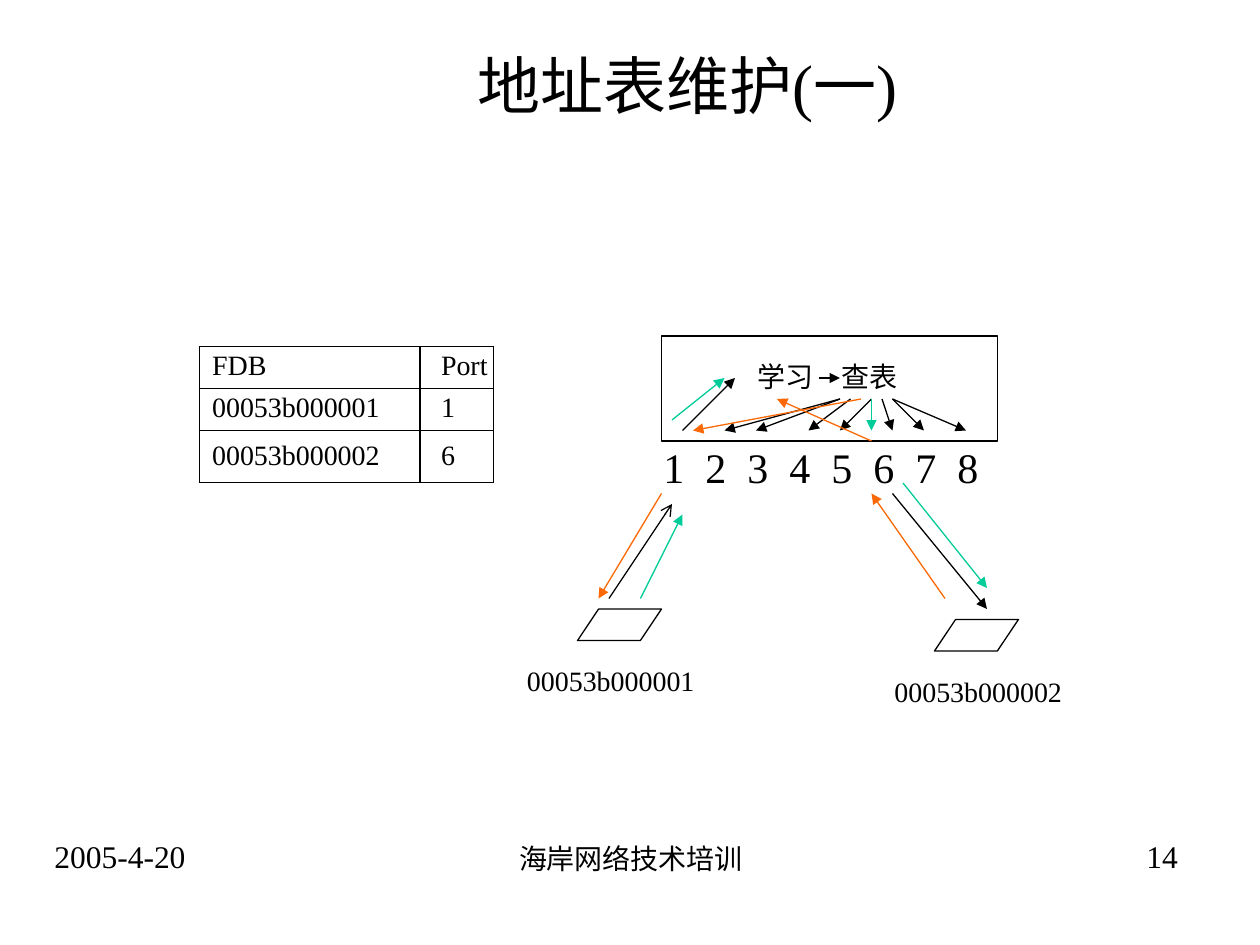
from dataclasses import dataclass

from lxml import etree
from pptx import Presentation
from pptx.dml.color import RGBColor
from pptx.enum.shapes import MSO_CONNECTOR, MSO_SHAPE
from pptx.enum.text import MSO_ANCHOR, MSO_AUTO_SIZE, PP_ALIGN
from pptx.oxml.ns import qn
from pptx.util import Pt

STRAIGHT = MSO_CONNECTOR.STRAIGHT
RECTANGLE = MSO_SHAPE.RECTANGLE
PARALLELOGRAM = MSO_SHAPE.PARALLELOGRAM
MIDDLE = MSO_ANCHOR.MIDDLE
GROW = MSO_AUTO_SIZE.SHAPE_TO_FIT_TEXT
NO_AUTOFIT = MSO_AUTO_SIZE.NONE
LEFT = PP_ALIGN.LEFT
CENTER = PP_ALIGN.CENTER


@dataclass(frozen=True)
class Theme:
    font: str = "Times New Roman"
    black: str = "000000"
    white: str = "FFFFFF"
    orange: str = "FC6804"
    green: str = "00CC99"
    title: int = 36
    ports: int = 24
    footer: int = 18
    body: int = 16
    thin: float = 0.75
    frame: float = 1


theme = Theme()


def write_text(frame, text, size=theme.body, align=LEFT, spacing=None, tab_step=None):
    paragraph = frame.paragraphs[0]
    paragraph.alignment = align
    if tab_step:
        tabs = etree.SubElement(paragraph._p.get_or_add_pPr(), qn("a:tabLst"))
        for index in range(1, text.count("\t") + 1):
            etree.SubElement(tabs, qn("a:tab"), pos=str(Pt(tab_step * index)), algn="l")
    if spacing:
        paragraph.line_spacing = spacing
    run = paragraph.add_run()
    run.text = text
    run.font.name = theme.font
    run.font.size = Pt(size)
    run.font.color.rgb = RGBColor.from_string(theme.black)


presentation = Presentation()
presentation.slide_width = Pt(720)
presentation.slide_height = Pt(540)
slide = presentation.slides.add_slide(presentation.slide_layouts[5])
shapes = slide.shapes

title = shapes.title
title.left, title.top, title.width, title.height = Pt(246), Pt(24), Pt(294), Pt(48)
title.fill.solid()
title.fill.fore_color.rgb = RGBColor.from_string(theme.white)
title.text_frame.auto_size = NO_AUTOFIT
title.text_frame.vertical_anchor = MIDDLE
write_text(title.text_frame, "地址表维护(一)", size=theme.title, align=CENTER)

outlines = [
    (RECTANGLE, 378, 192, 192, 76, theme.frame),
    (PARALLELOGRAM, 330, 348, 48, 18, theme.thin),
    (PARALLELOGRAM, 534, 354, 48, 18, theme.thin),
]
outlines[0] = (RECTANGLE, 378, 192, 192, 60, theme.frame)
for kind, left, top, width, height, weight in outlines:
    shape = shapes.add_shape(kind, Pt(left), Pt(top), Pt(width), Pt(height))
    shape.shadow.inherit = False
    shape.fill.background()
    shape.line.color.rgb = RGBColor.from_string(theme.black)
    shape.line.width = Pt(weight)
    if kind == PARALLELOGRAM:
        shape.adjustments[0] = 0.67

port_numbers = "\t".join(str(number) for number in range(1, 9))
labels = [
    ("2005-4-20", 24, 475, 90, 29, True, {"size": theme.footer}),
    ("海岸网络技术培训", 289.5, 477.5, 142.5, 26.5, False, {}),
    ("14", 648, 475, 35, 29, False, {"size": theme.footer}),
    (port_numbers, 372, 252, 204, 33, True,
     {"size": theme.ports, "spacing": 0.9, "tab_step": 24}),
    ("学习", 426, 204, 54, 24, True, {"spacing": 0.9}),
    ("查表", 474, 204, 54, 24, True, {"spacing": 0.9}),
    ("00053b000001", 294, 378, 132, 24, True, {"spacing": 0.9}),
    ("00053b000002", 504, 384, 168, 24, True, {"spacing": 0.9}),
]
for text, left, top, width, height, wrap, style in labels:
    box = shapes.add_textbox(Pt(left), Pt(top), Pt(width), Pt(height))
    box.text_frame.word_wrap = wrap
    box.text_frame.auto_size = GROW
    write_text(box.text_frame, text, **style)

fdb_rows = [("FDB", "Port"), ("00053b000001", "1"), ("00053b000002", "6")]
column_widths = [126, 42]
row_heights = [24, 24, 30]
table = shapes.add_table(
    len(fdb_rows), len(column_widths), Pt(114), Pt(198),
    Pt(sum(column_widths)), Pt(sum(row_heights)),
).table
table.first_row = False
table.horz_banding = False
for column, width in zip(table.columns, column_widths):
    column.width = Pt(width)
for row, height, values in zip(table.rows, row_heights, fdb_rows):
    row.height = Pt(height)
    for cell, value, margin in zip(row.cells, values, (7.2, 12)):
        properties = cell._tc.get_or_add_tcPr()
        for side in ("lnL", "lnR", "lnT", "lnB"):
            border = etree.SubElement(properties, qn(f"a:{side}"), w=str(Pt(theme.thin)))
            fill = etree.SubElement(border, qn("a:solidFill"))
            etree.SubElement(fill, qn("a:srgbClr"), val=theme.black)
        cell.fill.background()
        cell.margin_left = Pt(margin)
        cell.margin_right = cell.margin_top = cell.margin_bottom = 0
        cell.vertical_anchor = MIDDLE
        write_text(cell.text_frame, value, spacing=0.9)

arrows = [
    (348, 342, 384, 288, theme.black, "arrow"),
    (390, 246, 420, 216, theme.black, "triangle"),
    (510, 282, 564, 348, theme.black, "triangle"),
    (468, 216, 480, 216, theme.black, "triangle"),
]
lookup_spread = [
    (498, 480), (504, 510), (510, 528), (486, 462), (480, 432), (480, 414), (510, 552),
]
arrows += [(start, 228, end, 246, theme.black, "triangle") for start, end in lookup_spread]
arrows += [
    (540, 342, 498, 282, theme.orange, "triangle"),
    (498, 252, 444, 228, theme.orange, "triangle"),
    (492, 228, 396, 246, theme.orange, "triangle"),
    (378, 282, 342, 342, theme.orange, "triangle"),
    (366, 342, 390, 294, theme.green, "triangle"),
    (384, 240, 414, 216, theme.green, "triangle"),
    (498, 228, 498, 246, theme.green, "triangle"),
    (516, 276, 564, 336, theme.green, "triangle"),
]
for start_x, start_y, end_x, end_y, color, head in arrows:
    connector = shapes.add_connector(STRAIGHT, Pt(start_x), Pt(start_y), Pt(end_x), Pt(end_y))
    connector.line.color.rgb = RGBColor.from_string(color)
    connector.line.width = Pt(theme.thin)
    etree.SubElement(connector.line._get_or_add_ln(), qn("a:tailEnd"), type=head)
    etree.SubElement(connector._element.spPr, qn("a:effectLst"))

presentation.save("out.pptx")
